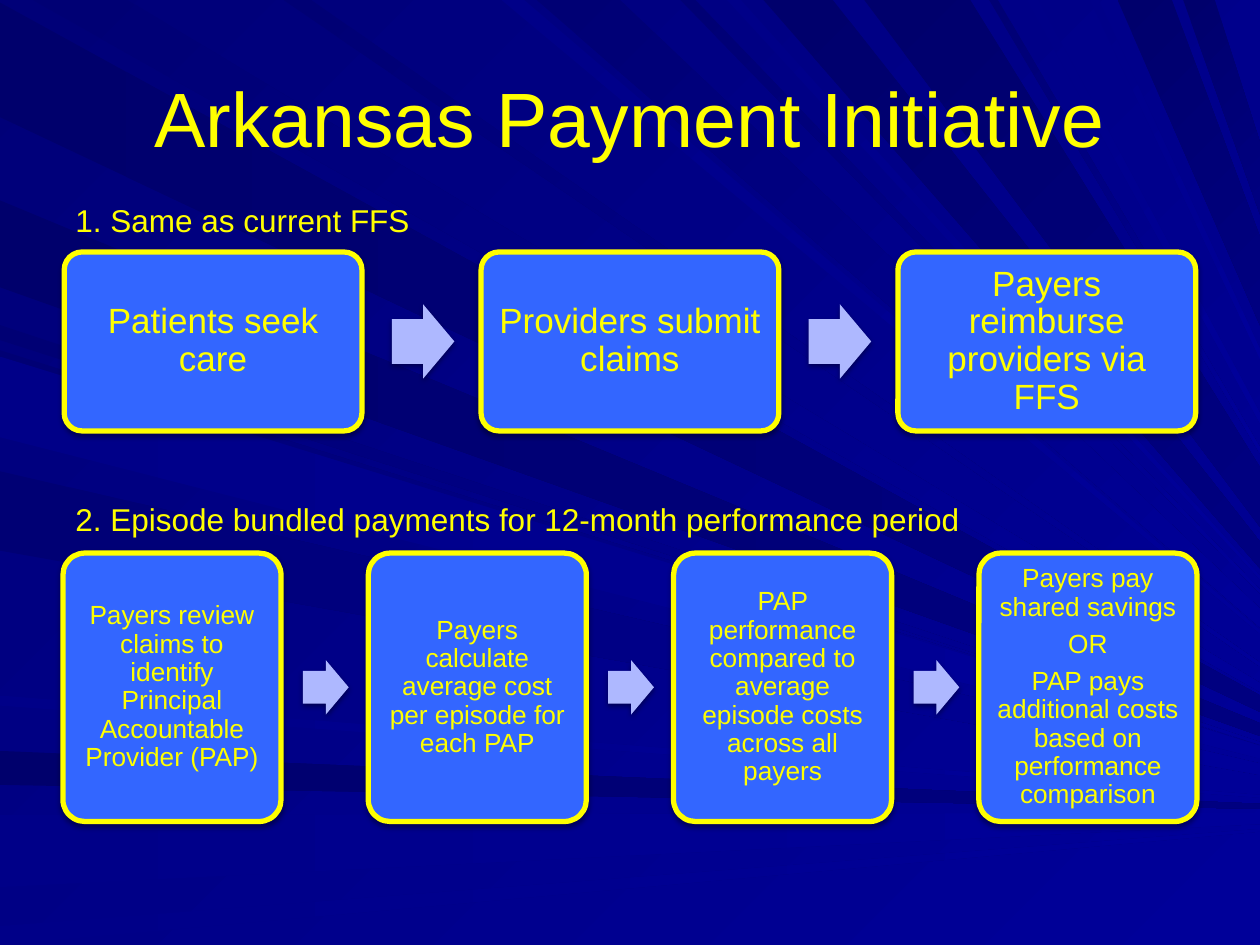
import pptx
import pptx.util
import pptx.dml.color
import pptx.enum.shapes
import pptx.enum.text
import pptx.oxml

NAVY, ROYAL, YELLOW, BLUE, LILAC = "000078", "000099", "FFFF00", "3366FF", "AEB8FF"
SHADOW = (
    '<a:outerShdw xmlns:a="http://schemas.openxmlformats.org/drawingml/2006/main" '
    'blurRad="39370" dist="20320" dir="5400000" rotWithShape="0">'
    '<a:srgbClr val="000000"><a:alpha val="38000"/></a:srgbClr></a:outerShdw>'
)
COLUMNS, ROWS = 1000, 750

deck = pptx.Presentation()
deck.slide_width, deck.slide_height = pptx.util.Inches(10), pptx.util.Inches(7.5)
column = deck.slide_width // COLUMNS
row = deck.slide_height // ROWS
page = deck.slides.add_slide(deck.slide_layouts[6])


def paint(fill, first, last=None, angle=0):
    if last is None:
        fill.solid()
        fill.fore_color.rgb = pptx.dml.color.RGBColor.from_string(first)
        return
    fill.gradient()
    fill.gradient_angle = (360 - angle) % 360
    for stop, color in zip(fill.gradient_stops, (first, last)):
        stop.color.rgb = pptx.dml.color.RGBColor.from_string(color)


def write(box, lines, size, frame_format, para_format):
    frame = box.text_frame
    for name, value in frame_format.items():
        setattr(frame, name, value)
    for index, line in enumerate(lines):
        para = frame.add_paragraph() if index else frame.paragraphs[0]
        for name, value in para_format.items():
            setattr(para, name, value)
        span = para.add_run()
        span.text = line
        for name, value in {"name": "Arial", "size": pptx.util.Pt(size)}.items():
            setattr(span.font, name, value)
        paint(span.font.fill, YELLOW)


paint(page.background.fill, NAVY, ROYAL, 45)

focus_x, focus_y = 1170, 645
tones = {"deep": ("00006C", "000080"), "medium": ("000074", ROYAL), "soft": ("000088", ROYAL)}
edges = {
    "left": {"angle": 0, "rays": {
        "deep": [(2, 93), (159, 228), (596, 623)],
        "medium": [(258, 270), (278, 342), (374, 437)],
        "soft": [(283, 347), (552, 560), (647, 704), (735, 750)]}},
    "top": {"angle": 45, "rays": {
        "deep": [(606, 661), (686, 770), (887, 930), (939, 964)],
        "medium": [(26, 101), (225, 247), (426, 492), (540, 552), (785, 792)],
        "soft": [(398, 416), (577, 588), (815, 824), (865, 872)]}},
}
for edge, beam in edges.items():
    for tone, spans in beam["rays"].items():
        for start, end in spans:
            near = [(0, at) if edge == "left" else (at, 0) for at in (start, end)]
            far = [(COLUMNS, round(y + (focus_y - y) * (COLUMNS - x) / (focus_x - x)))
                   for x, y in near]
            builder = page.shapes.build_freeform(*near[0], scale=column)
            builder.add_line_segments([near[1], far[1], far[0]], close=True)
            ray = builder.convert_to_shape()
            ray.shadow.inherit = False
            ray.line.fill.background()
            paint(ray.fill, *tones[tone], beam["angle"])

middle = pptx.enum.text.MSO_ANCHOR.MIDDLE
center = pptx.enum.text.PP_ALIGN.CENTER
title = page.shapes.add_textbox(50 * column, 30 * row, 900 * column, 125 * row)
write(title, ["Arkansas Payment Initiative"], 44,
      {"word_wrap": True, "vertical_anchor": middle}, {"alignment": center})

flows = [
    {"label": "1. Same as current FFS", "label_top": 155, "label_width": 333,
     "left": 51, "top": 200, "height": 142, "size": 20, "inset": 8, "after": 7,
     "steps": [["Patients seek care"], ["Providers submit claims"],
               ["Payers reimburse providers via FFS"]]},
    {"label": "2. Episode bundled payments for 12-month performance period",
     "label_top": 392, "label_width": 758,
     "left": 50, "top": 439, "height": 213, "size": 15, "inset": 6, "after": 5,
     "steps": [["Payers review claims to identify Principal Accountable Provider (PAP)"],
               ["Payers calculate average cost per episode for each PAP"],
               ["PAP performance compared to average episode costs across all payers"],
               ["Payers pay shared savings", "OR",
                "PAP pays additional costs based on performance comparison"]]},
]
kinds = pptx.enum.shapes.MSO_SHAPE
gap_share, arrow_offset, arrow_width, arrow_height = 0.4, 1.1, 0.21, 0.25
for flow in flows:
    label = page.shapes.add_textbox(50 * column, flow["label_top"] * row,
                                    flow["label_width"] * column, 40 * row)
    write(label, [flow["label"]], 18, {"word_wrap": True}, {})

    count = len(flow["steps"])
    width = (COLUMNS - 2 * flow["left"]) / (count + gap_share * (count - 1))
    pitch = width * (1 + gap_share)
    center_line = flow["top"] + flow["height"] / 2
    frame_format = {"word_wrap": True, "vertical_anchor": middle}
    for side in ("left", "top", "right", "bottom"):
        frame_format["margin_" + side] = flow["inset"] * column
    para_format = {"alignment": center, "line_spacing": 0.9,
                   "space_after": pptx.util.Pt(flow["after"])}

    for index, lines in enumerate(flow["steps"]):
        left = flow["left"] + pitch * index
        parts = [(kinds.ROUNDED_RECTANGLE, left, width, flow["height"], BLUE, [0.1])]
        if index < count - 1:
            parts.append((kinds.RIGHT_ARROW, left + arrow_offset * width, arrow_width * width,
                          arrow_height * width, LILAC, [0.6, 0.5]))
        for kind, start, wide, high, color, adjustments in parts:
            box = page.shapes.add_shape(kind, round(start * column),
                                        round((center_line - high / 2) * row),
                                        round(wide * column), round(high * row))
            for place, value in enumerate(adjustments):
                box.adjustments[place] = value
            paint(box.fill, color)
            box.shadow.inherit = False
            box.element.spPr.find(pptx.oxml.ns.qn("a:effectLst")).append(
                pptx.oxml.parse_xml(SHADOW))
            if kind == kinds.ROUNDED_RECTANGLE:
                paint(box.line.fill, YELLOW)
                box.line.width = pptx.util.Pt(3)
                write(box, lines, flow["size"], frame_format, para_format)
            else:
                box.line.fill.background()

deck.save("out.pptx")
